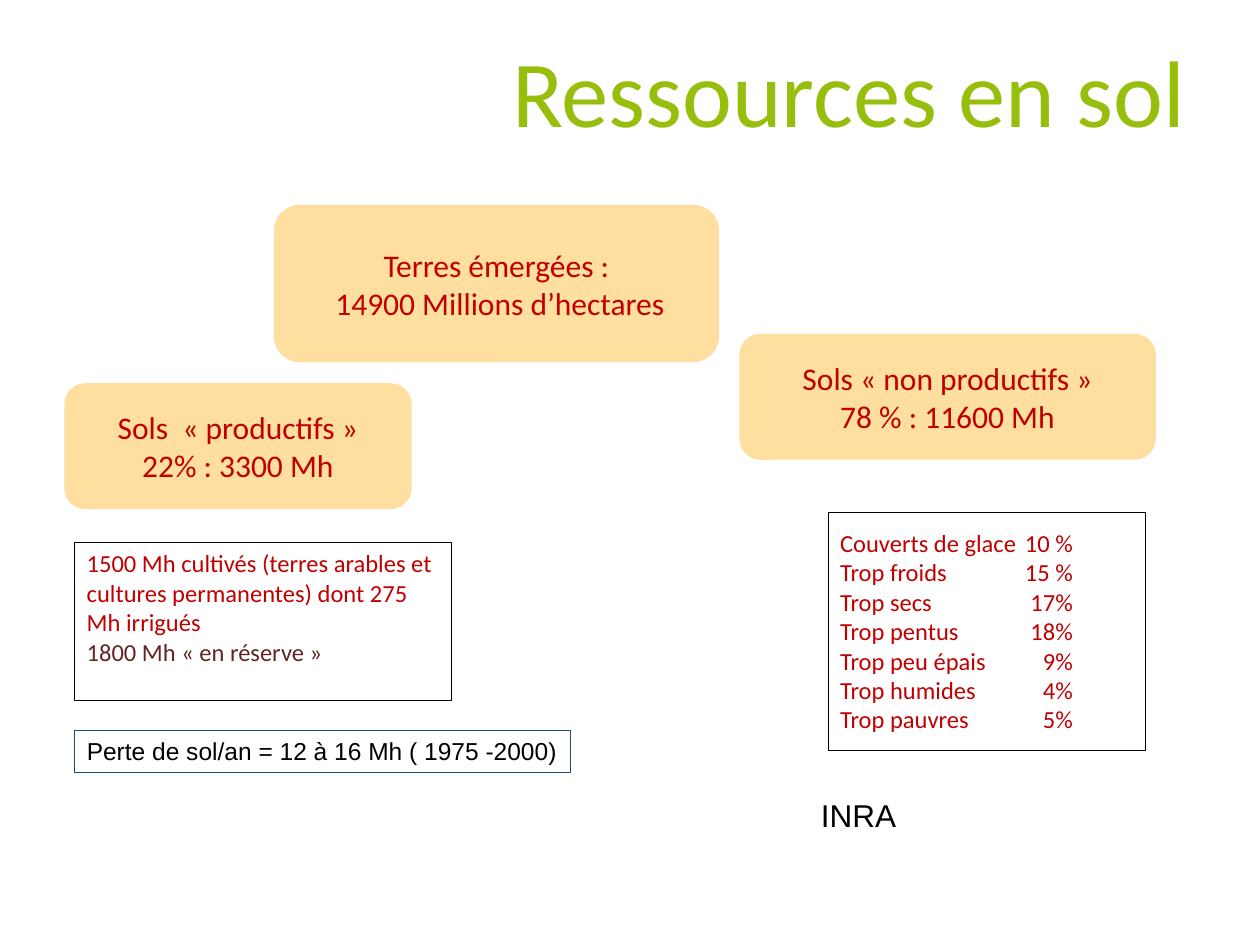
from lxml.etree import SubElement
from pptx import Presentation
from pptx.dml.color import RGBColor
from pptx.enum.shapes import MSO_SHAPE
from pptx.enum.text import MSO_ANCHOR, PP_ALIGN
from pptx.oxml.ns import qn
from pptx.util import Pt

GREEN = RGBColor(0x97, 0xBE, 0x0D)
SAND = RGBColor(0xFE, 0xDF, 0xA0)
RED = RGBColor(0xC0, 0x00, 0x00)
BROWN = RGBColor(0x63, 0x25, 0x23)
NAVY = RGBColor(0x1F, 0x49, 0x7D)
BLACK = RGBColor(0x00, 0x00, 0x00)

HEADING = {"name": "Calibri", "size": Pt(54)}
LAND = {"name": "Calibri", "size": Pt(18)}
DETAIL = {"name": "Calibri", "size": Pt(14)}
LOSS = {"name": "Arial", "size": Pt(14)}
SOURCE = {"name": "Arial", "size": Pt(18)}

LAND_CLASSES = [
    ((156.5, 117, 254.5, 90), ["Terres émergées :", " 14900 Millions d’hectares"]),
    ((36.75, 219, 198.5, 72), ["Sols  « productifs »", "22% : 3300 Mh"]),
    ((422.5, 190.75, 238, 72), ["Sols « non productifs »", "78 % : 11600 Mh"]),
]
LIMITS = [
    ("Couverts de glace", "10 %"),
    ("Trop froids", "15 %"),
    ("Trop secs", "17%"),
    ("Trop pentus", "18%"),
    ("Trop peu épais", "9%"),
    ("Trop humides", "4%"),
    ("Trop pauvres", "5%"),
]
PRODUCTIVE_USES = [
    "1500 Mh cultivés (terres arables et cultures permanentes) dont 275 Mh irrigués",
    "1800 Mh « en réserve »",
]


def apply_format(target, values):
    """Set every attribute in values on the target."""
    for attribute, value in values.items():
        setattr(target, attribute, value)


def write_lines(frame, lines, style, colour, align=PP_ALIGN.LEFT, tab=None):
    """Write one paragraph per line, with an optional right tab in points."""
    frame.word_wrap = True
    for index, line in enumerate(lines):
        paragraph = frame.add_paragraph() if index else frame.paragraphs[0]
        paragraph.text = line
        paragraph.alignment = align
        if tab:
            stops = SubElement(paragraph._p.get_or_add_pPr(), qn("a:tabLst"))
            SubElement(stops, qn("a:tab"), pos=str(Pt(tab)), algn="r")
        apply_format(paragraph.font, style)
        paragraph.font.color.rgb = colour


def add_title(slide, place, wording):
    """Place and format the slide title."""
    title = slide.shapes.title
    apply_format(title, dict(zip(("left", "top", "width", "height"), map(Pt, place))))
    write_lines(title.text_frame, [wording], HEADING, GREEN, PP_ALIGN.CENTER)
    apply_format(title.text_frame, {
        "vertical_anchor": MSO_ANCHOR.MIDDLE,
        "margin_left": Pt(0),
        "margin_right": Pt(12),
    })


def add_land_class(slide, place, lines):
    """Add a rounded, filled box that names a class of land."""
    land = slide.shapes.add_shape(MSO_SHAPE.ROUNDED_RECTANGLE, *map(Pt, place))
    land.shadow.inherit = False
    land.fill.solid()
    land.fill.fore_color.rgb = SAND
    land.line.fill.background()
    land.text_frame.vertical_anchor = MSO_ANCHOR.MIDDLE
    write_lines(land.text_frame, lines, LAND, RED, PP_ALIGN.CENTER)


def add_framed_note(slide, place, lines, style, colour, border, weight,
                    anchor=MSO_ANCHOR.TOP, tab=None):
    """Add an unfilled box with a thin border and return its text frame."""
    note = slide.shapes.add_shape(MSO_SHAPE.RECTANGLE, *map(Pt, place))
    note.shadow.inherit = False
    note.fill.background()
    note.line.color.rgb = border
    note.line.width = Pt(weight)
    note.text_frame.vertical_anchor = anchor
    write_lines(note.text_frame, lines, style, colour, tab=tab)
    return note.text_frame


def add_source(slide, place, wording):
    """Add the plain text that names the source."""
    source = slide.shapes.add_textbox(*map(Pt, place))
    write_lines(source.text_frame, [wording], SOURCE, BLACK)


def main():
    """Build and save the slide."""
    deck = Presentation()
    apply_format(deck, {"slide_width": Pt(720), "slide_height": Pt(540)})
    slide = deck.slides.add_slide(deck.slide_layouts[5])

    add_title(slide, (281, 0, 420, 102), "Ressources en sol")
    for place, lines in LAND_CLASSES:
        add_land_class(slide, place, lines)

    add_framed_note(slide, (473, 292.5, 181.5, 136), ["\t".join(limit) for limit in LIMITS],
                    DETAIL, RED, BLACK, 0.25, MSO_ANCHOR.MIDDLE, tab=133)
    uses = add_framed_note(slide, (42.5, 309.75, 215.5, 90.5), PRODUCTIVE_USES,
                           DETAIL, RED, BLACK, 0.25)
    uses.paragraphs[-1].font.color.rgb = BROWN
    add_framed_note(slide, (42.5, 417.25, 283.5, 24.25),
                    ["Perte de sol/an = 12 à 16 Mh ( 1975 -2000)"], LOSS, BLACK, NAVY, 0.75)
    add_source(slide, (462, 451.5, 79, 29), "INRA")

    deck.save("out.pptx")


if __name__ == "__main__":
    main()
